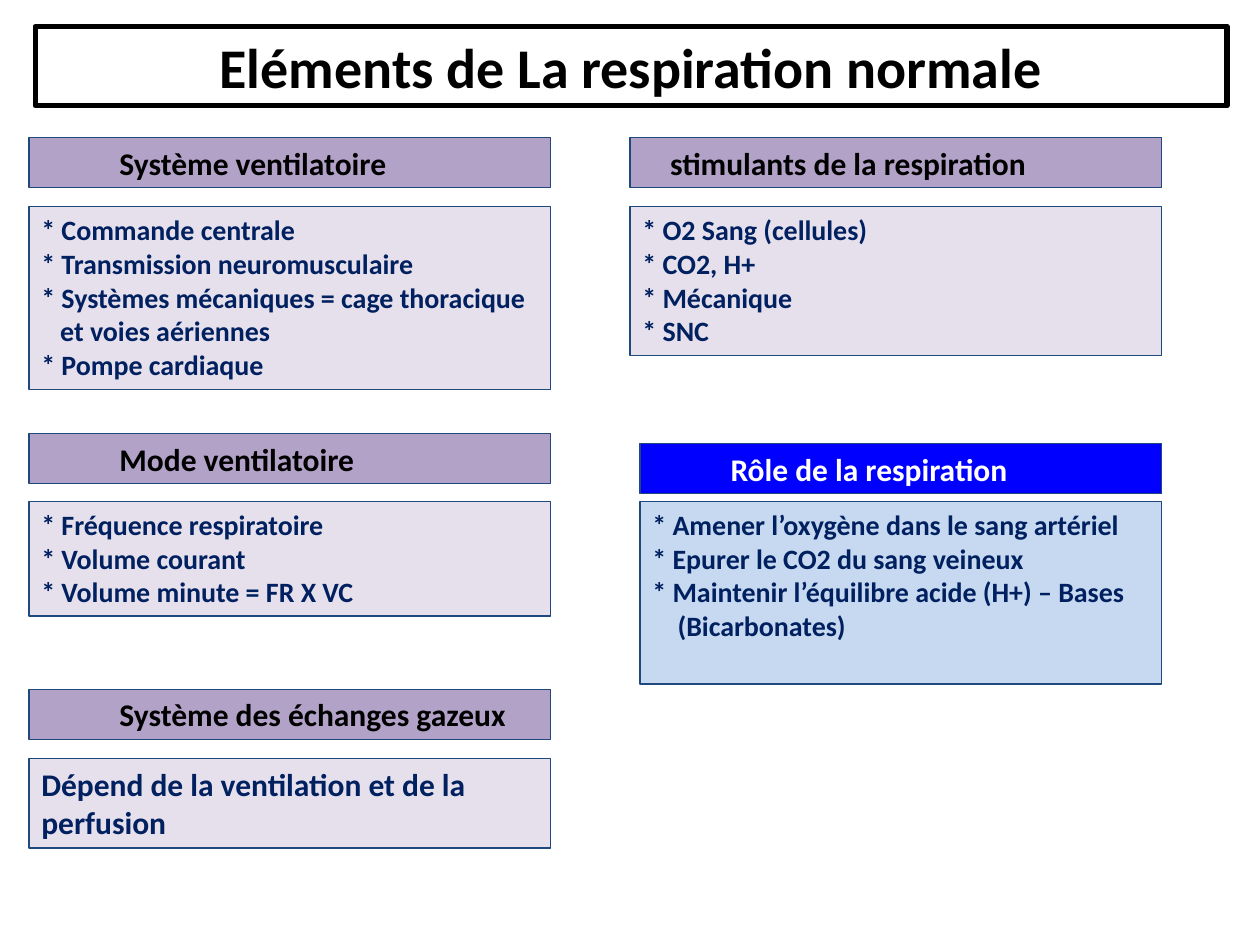
"""Build the slide on the elements of normal breathing."""
from dataclasses import dataclass

from lxml.etree import SubElement
from pptx import Presentation
from pptx.dml.color import RGBColor as Rgb
from pptx.enum.shapes import MSO_SHAPE as Shape
from pptx.enum.text import MSO_ANCHOR as Anchor, PP_ALIGN as Align
from pptx.oxml.ns import qn
from pptx.util import Inches, Pt


@dataclass(frozen=True)
class Theme:
    font: str = "Calibri"
    black: str = "000000"
    white: str = "FFFFFF"
    navy: str = "002060"
    border: str = "1F497D"
    purple: str = "B3A2C7"
    lilac: str = "E6E0EC"
    blue: str = "0000FF"
    sky: str = "C6D9F1"
    title_size: int = 32
    heading_size: int = 18
    list_size: int = 16
    title_border: float = 3
    panel_border: float = 0.75


@dataclass(frozen=True)
class Line:
    text: str
    indent: float = 0


@dataclass(frozen=True)
class Box:
    left: float
    top: float
    width: float
    height: float


@dataclass(frozen=True)
class Panel:
    heading: Line
    heading_box: Box
    lines: tuple[Line, ...]
    body_top: float
    body_height: float
    body_size: int
    heading_fill: str
    heading_color: str
    body_fill: str


THEME = Theme()
HEADING_INDENT = 0.62
HEADING_HEIGHT = 0.4
LEFT_X, RIGHT_X, ROLE_X = 0.23, 5, 5.08
NARROW, WIDE = 4.14, 4.22
PURPLE_STYLE = (THEME.purple, THEME.black, THEME.lilac)
BLUE_STYLE = (THEME.blue, THEME.white, THEME.sky)

PANELS = (
    Panel(Line("Système ventilatoire", HEADING_INDENT),
          Box(LEFT_X, 1.09, NARROW, HEADING_HEIGHT),
          (Line("* Commande centrale"),
           Line("* Transmission neuromusculaire"),
           Line("* Systèmes mécaniques = cage thoracique"),
           Line("et voies aériennes", 0.15),
           Line("* Pompe cardiaque")),
          1.64, 1.45, THEME.list_size, *PURPLE_STYLE),
    Panel(Line("Mode ventilatoire", HEADING_INDENT),
          Box(LEFT_X, 3.44, NARROW, HEADING_HEIGHT),
          (Line("* Fréquence respiratoire"),
           Line("* Volume courant"),
           Line("* Volume minute = FR X VC")),
          3.98, 0.91, THEME.list_size, *PURPLE_STYLE),
    Panel(Line("Système des échanges gazeux", HEADING_INDENT),
          Box(LEFT_X, 5.47, NARROW, HEADING_HEIGHT),
          (Line("Dépend de la ventilation et de la perfusion"),),
          6.02, 0.71, THEME.heading_size, *PURPLE_STYLE),
    Panel(Line("stimulants de la respiration", 0.22),
          Box(RIGHT_X, 1.09, WIDE, HEADING_HEIGHT),
          (Line("* O2 Sang (cellules)"),
           Line("* CO2, H+"),
           Line("* Mécanique"),
           Line("* SNC")),
          1.64, 1.18, THEME.list_size, *PURPLE_STYLE),
    Panel(Line("Rôle de la respiration", HEADING_INDENT),
          Box(ROLE_X, 3.52, NARROW, HEADING_HEIGHT),
          (Line("* Amener l’oxygène dans le sang artériel"),
           Line("* Epurer le CO2 du sang veineux"),
           Line("* Maintenir l’équilibre acide (H+) – Bases"),
           Line("(Bicarbonates)", 0.2)),
          3.98, 1.45, THEME.list_size, *BLUE_STYLE),
)


def draw_box(slide, box: Box, lines: tuple[Line, ...], size: int, color: str,
             border: str, border_width: float, fill: str | None = None,
             align: Align = Align.LEFT, anchor: Anchor = Anchor.TOP):
    """Draw a bordered rectangle holding bold lines and return it."""
    rectangle = slide.shapes.add_shape(
        Shape.RECTANGLE, Inches(box.left), Inches(box.top),
        Inches(box.width), Inches(box.height))
    rectangle.shadow.inherit = False
    if fill:
        rectangle.fill.solid()
        rectangle.fill.fore_color.rgb = Rgb.from_string(fill)
    else:
        rectangle.fill.background()
    rectangle.line.color.rgb = Rgb.from_string(border)
    rectangle.line.width = Pt(border_width)
    frame = rectangle.text_frame
    frame.word_wrap = True
    frame.vertical_anchor = anchor
    frame.text = "\n".join(line.text for line in lines)
    for paragraph, line in zip(frame.paragraphs, lines):
        paragraph.alignment = align
        if line.indent:
            paragraph._p.get_or_add_pPr().set("marL", str(Inches(line.indent)))
        for run in paragraph.runs:
            run.font.name = THEME.font
            run.font.size = Pt(size)
            run.font.bold = True
            run.font.color.rgb = Rgb.from_string(color)
    return rectangle


def draw_title(slide, text: str) -> None:
    """Draw the framed slide title with rounded border corners."""
    title = draw_box(slide, Box(0.28, 0.21, 9.46, 0.63), (Line(text),),
                     THEME.title_size, THEME.black, THEME.black,
                     THEME.title_border, align=Align.CENTER,
                     anchor=Anchor.MIDDLE)
    SubElement(title.line._get_or_add_ln(), qn("a:round"))


def draw_panel(slide, panel: Panel) -> None:
    """Draw a heading bar and the body box below it."""
    bar = panel.heading_box
    draw_box(slide, bar, (panel.heading,), THEME.heading_size,
             panel.heading_color, THEME.border, THEME.panel_border,
             panel.heading_fill)
    body = Box(bar.left, panel.body_top, bar.width, panel.body_height)
    draw_box(slide, body, panel.lines, panel.body_size, THEME.navy,
             THEME.border, THEME.panel_border, panel.body_fill)


def main() -> None:
    """Create the presentation and save it."""
    deck = Presentation()
    deck.slide_width, deck.slide_height = Inches(10), Inches(7.5)
    slide = deck.slides.add_slide(deck.slide_layouts[6])
    draw_title(slide, "Eléments de La respiration normale")
    for panel in PANELS:
        draw_panel(slide, panel)
    deck.save("out.pptx")


if __name__ == "__main__":
    main()
